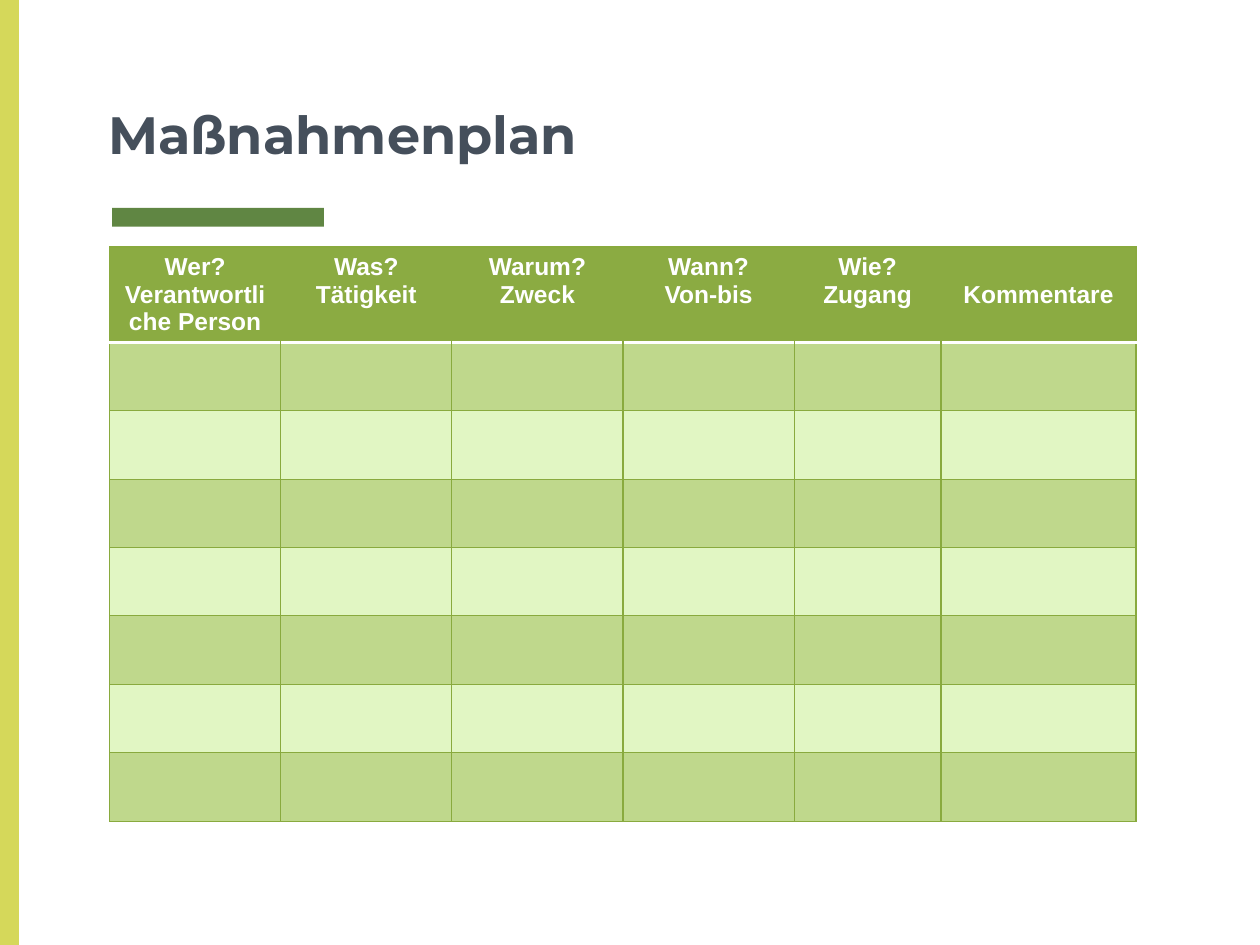
from lxml.etree import SubElement
from pptx import Presentation
from pptx.dml.color import RGBColor
from pptx.enum.shapes import MSO_SHAPE
from pptx.enum.text import MSO_ANCHOR, PP_ALIGN
from pptx.oxml.ns import qn
from pptx.util import Cm, Pt

TITLE = "Maßnahmenplan"
HEADERS = [
    ("Wer?", "Verantwortliche Person"),
    ("Was?", "Tätigkeit"),
    ("Warum?", "Zweck"),
    ("Wann?", "Von-bis"),
    ("Wie?", "Zugang"),
    ("Kommentare",),
]
COL_WIDTHS = [3.45, 3.45, 3.45, 3.45, 2.96, 3.93]
BODY_ROWS = 7
HEADER_HEIGHT, ROW_HEIGHT = 1.91, 1.38
TABLE_LEFT, TABLE_TOP = 2.21, 4.98

HEADER_FILL, BAND_FILLS = "8BAB42", ("BFD88C", "E1F6C3")
GRID = ("89AA3E", 0.75)
HEADER_RULE = ("FFFFFF", 2)
BARS = [
    ((2.26, 4.19, 4.27, 0.38), "608643"),
    ((0, 0, 0.38, 19.05), "D5D85A"),
]
TITLE_FONT = {"name": "Montserrat", "size": Pt(30), "bold": True}
HEADER_FONT = {"name": "Arial", "size": Pt(14), "bold": True}


def rgb(hex_color):
    return RGBColor.from_string(hex_color)


def format_font(font, values, color):
    for name, value in values.items():
        setattr(font, name, value)
    font.color.rgb = rgb(color)


def paint(target, color):
    target.fill.solid()
    target.fill.fore_color.rgb = rgb(color)


def set_borders(cell, **borders):
    """Draw the sides L, R, T, B in schema order; a side not given has no line."""
    tc_pr = cell._tc.get_or_add_tcPr()
    for side in "LRTB":
        ln = SubElement(tc_pr, qn(f"a:ln{side}"))
        if side in borders:
            color, width = borders[side]
            ln.set("w", str(Pt(width)))
            fill = SubElement(ln, qn("a:solidFill"))
            SubElement(fill, qn("a:srgbClr")).set("val", color)
        else:
            SubElement(ln, qn("a:noFill"))


def add_bar(s, box, color):
    bar = s.shapes.add_shape(MSO_SHAPE.RECTANGLE, *map(Cm, box))
    bar.shadow.inherit = False
    paint(bar, color)
    bar.line.fill.background()


def format_title(title):
    title.left, title.top, title.width, title.height = map(Cm, (1.93, 0, 21.56, 3.58))
    tf = title.text_frame
    tf.text = TITLE
    tf.vertical_anchor = MSO_ANCHOR.BOTTOM
    for side in ("left", "right", "top", "bottom"):
        setattr(tf, f"margin_{side}", Cm(0.25))
    p = tf.paragraphs[0]
    p.alignment = PP_ALIGN.LEFT
    format_font(p.runs[0].font, TITLE_FONT, "454F5B")


def fill_header(cell, lines, borders):
    set_borders(cell, T=GRID, B=HEADER_RULE, **borders)
    paint(cell, HEADER_FILL)
    cell.vertical_anchor = MSO_ANCHOR.MIDDLE if len(lines) == 1 else MSO_ANCHOR.TOP
    cell.text = "\n".join(lines)
    for p in cell.text_frame.paragraphs:
        p.alignment = PP_ALIGN.CENTER
        format_font(p.runs[0].font, HEADER_FONT, "FFFFFF")


def add_plan(s):
    heights = [HEADER_HEIGHT] + [ROW_HEIGHT] * BODY_ROWS
    box = (TABLE_LEFT, TABLE_TOP, sum(COL_WIDTHS), sum(heights))
    table = s.shapes.add_table(len(heights), len(COL_WIDTHS), *map(Cm, box)).table
    for col, width in zip(table.columns, COL_WIDTHS):
        col.width = Cm(width)
    for row, height in zip(table.rows, heights):
        row.height = Cm(height)

    last = len(HEADERS) - 1
    for c, lines in enumerate(HEADERS):
        outer = {0: {"L": GRID}, last: {"R": GRID}}.get(c, {})
        fill_header(table.cell(0, c), lines, outer)
        for r in range(1, BODY_ROWS + 1):
            cell = table.cell(r, c)
            top = HEADER_RULE if r == 1 else GRID
            set_borders(cell, L=GRID, R=GRID, T=top, B=GRID)
            paint(cell, BAND_FILLS[(r - 1) % 2])


def main():
    prs = Presentation()
    prs.slide_width, prs.slide_height = Cm(25.4), Cm(19.05)
    s = prs.slides.add_slide(prs.slide_layouts[5])
    for box, color in BARS:
        add_bar(s, box, color)
    format_title(s.shapes.title)
    add_plan(s)
    prs.save("out.pptx")


if __name__ == "__main__":
    main()
